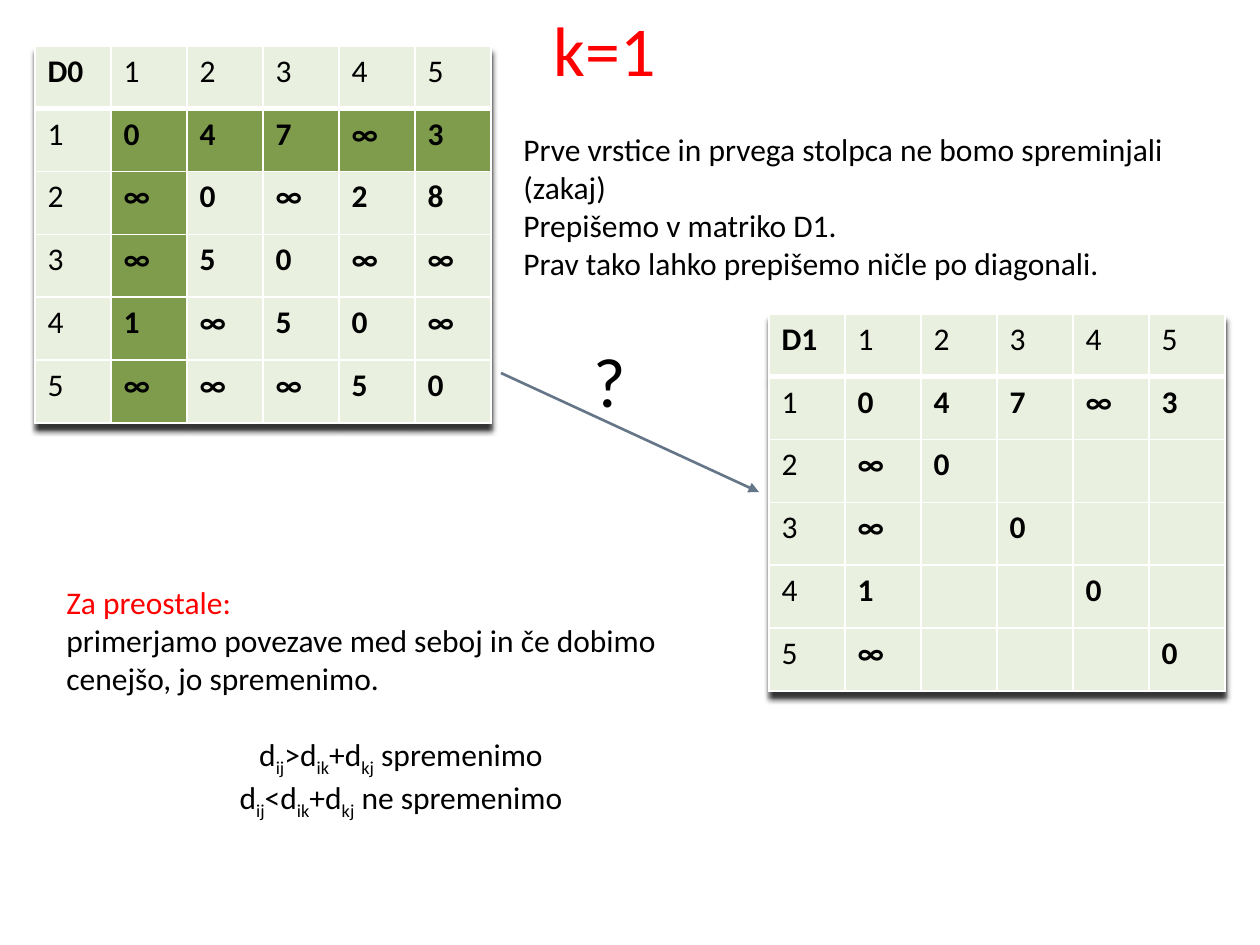
from lxml.etree import SubElement
from pptx import Presentation
from pptx.dml.color import RGBColor
from pptx.enum.shapes import MSO_CONNECTOR as LINE
from pptx.enum.text import MSO_ANCHOR as ANCHOR, PP_ALIGN as ALIGN
from pptx.oxml import parse_xml
from pptx.oxml.ns import nsdecls, qn
from pptx.util import Pt

PX = 914400 / 126
FONT = "Calibri"
RED = RGBColor(0xFF, 0x00, 0x00)
BLACK = RGBColor(0x00, 0x00, 0x00)
WHITE = RGBColor(0xFF, 0xFF, 0xFF)
PALE = RGBColor(0xEA, 0xF0, 0xE0)
GREEN = RGBColor(0x7E, 0x9C, 0x4C)
SLATE = RGBColor(0x65, 0x76, 0x89)

D0 = ["0 4 7 ∞ 3", "∞ 0 ∞ 2 8", "∞ 5 0 ∞ ∞", "1 ∞ 5 0 ∞", "∞ ∞ ∞ 5 0"]
D0 = [row.split() for row in D0]
# First row, first column and diagonal carry over.
D1 = [[val if 0 in (r, c) or r == c else "" for c, val in enumerate(row)]
      for r, row in enumerate(D0)]


def emu(*px):
    return [round(n * PX) for n in px]


def add_run(para, text, size=18, color=BLACK, bold=False, base=0):
    run = para.add_run()
    run.text = text
    font = run.font
    font.name, font.size, font.bold = FONT, Pt(size), bold
    font.color.rgb = color
    if base:
        run._r.get_or_add_rPr().set("baseline", str(base * 1000))


def set_edge(cell, side, width):
    edge = SubElement(cell._tc.get_or_add_tcPr(), qn("a:ln" + side))
    edge.set("w", str(Pt(width)))
    fill = SubElement(edge, qn("a:solidFill"))
    SubElement(fill, qn("a:srgbClr")).set("val", str(WHITE))


def add_shade(table):
    table._tbl.tblPr.insert(0, parse_xml(
        f'<a:effectLst {nsdecls("a")}>'
        '<a:outerShdw blurRad="40000" dist="50800" dir="5400000" rotWithShape="0">'
        '<a:srgbClr val="000000"><a:alpha val="80000"/></a:srgbClr>'
        '</a:outerShdw></a:effectLst>'))


def add_matrix(slide, box, name, vals, cross=False):
    """Draw a labelled matrix; cross marks its first row and column."""
    size = len(vals) + 1
    frame = slide.shapes.add_table(size, size, *emu(*box))
    table = frame.table
    table.first_row = table.horz_banding = False
    add_shade(table)
    heads = [str(n) for n in range(1, size)]
    grid = [[name] + heads] + [[h] + row for h, row in zip(heads, vals)]
    for r, row in enumerate(grid):
        for c, text in enumerate(row):
            cell = table.cell(r, c)
            for side in "LRTB":
                thick = (r, side) in ((0, "B"), (1, "T"))
                set_edge(cell, side, 3 if thick else 1)
            cell.fill.solid()
            marked = cross and r and c and 1 in (r, c)
            cell.fill.fore_color.rgb = GREEN if marked else PALE
            para = cell.text_frame.paragraphs[0]
            if text:
                add_run(para, text, bold=bool(r and c) or r == c == 0)
            else:
                para.font.size = Pt(18)


def add_text(slide, box, lines):
    """Each line is a list of runs: text, then options for add_run."""
    frame = slide.shapes.add_textbox(*emu(*box)).text_frame
    frame.word_wrap = True
    for i, line in enumerate(lines):
        para = frame.add_paragraph() if i else frame.paragraphs[0]
        for text, opts in line:
            add_run(para, text, **opts)
    return frame.paragraphs


def add_title(slide, box, text):
    title = slide.shapes.title
    title.left, title.top, title.width, title.height = emu(*box)
    frame = title.text_frame
    frame.vertical_anchor = ANCHOR.TOP
    para = frame.paragraphs[0]
    para.alignment = ALIGN.LEFT
    add_run(para, text, 40, RED)


def add_arrow(slide, ends):
    arrow = slide.shapes.add_connector(LINE.STRAIGHT, *emu(*ends))
    arrow.line.color.rgb = SLATE
    arrow.line.width = Pt(1.5)
    SubElement(arrow.line._get_or_add_ln(), qn("a:tailEnd")).set("type", "triangle")
    SubElement(arrow._element.spPr, qn("a:effectLst"))


def rule(sign, note):
    low = {"base": -25}
    return [("d", {}), ("ij", low), (sign + "d", {}), ("ik", low),
            ("+d", {}), ("kj", low), (" " + note, {})]


def add_rules(slide, box):
    paras = add_text(slide, box, [
        [("Za preostale:", {"color": RED})],
        [("primerjamo povezave med seboj in če dobimo cenejšo, jo spremenimo.", {})],
        rule(">", "spremenimo"),
        rule("<", "ne spremenimo")])
    for para in paras[2:]:
        para.alignment = ALIGN.CENTER
    paras[2].space_before = Pt(22)


def main():
    prs = Presentation()
    prs.slide_width, prs.slide_height = emu(1260, 945)
    slide = prs.slides.add_slide(prs.slide_layouts[5])
    add_matrix(slide, (35, 46, 456, 377), "D0", D0, cross=True)
    add_matrix(slide, (769, 314, 456, 377), "D1", D1)
    add_rules(slide, (54, 577, 694, 318))
    add_title(slide, (541, 0, 179, 97), "k=1")
    add_arrow(slide, (501, 373, 759, 492))
    add_text(slide, (581, 331, 100, 97), [[("?", {"size": 40})]])
    add_text(slide, (511, 124, 749, 127), [
        [("Prve vrstice in prvega stolpca ne bomo spreminjali (zakaj)", {})],
        [("Prepišemo v matriko D1.", {})],
        [("Prav tako lahko prepišemo ničle po diagonali.", {})]])
    prs.save("out.pptx")


if __name__ == "__main__":
    main()
